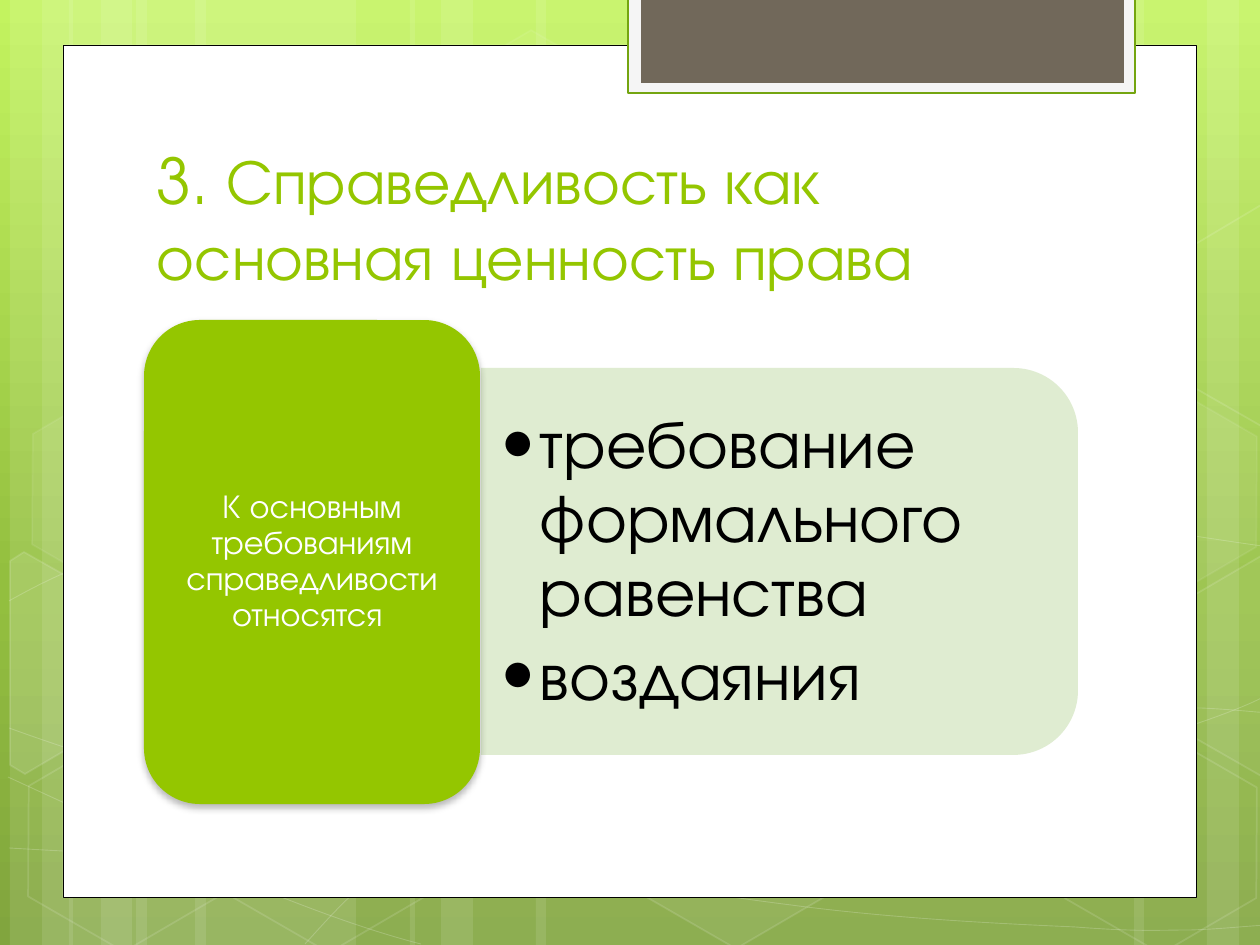
from lxml import etree
from pptx import Presentation
from pptx.dml.color import RGBColor
from pptx.enum.shapes import MSO_SHAPE as SHAPE
from pptx.enum.text import MSO_ANCHOR as ANCHOR, PP_ALIGN as ALIGN
from pptx.oxml.ns import qn
from pptx.util import Pt

PX = 914400 / 126
W, H = 1260, 945
FONT = "TeX Gyre Adventor"
COLORS = {
    "white": "FFFFFF", "black": "000000", "green": "94C600", "pale": "DCEACC",
    "tab": "F5F5F5", "tab_line": "74A510", "brown": "71685A",
}
SKY = [(0, "C3F35F"), (62, "93BF3F"), (100, "81A53E")]

TITLE = "3. Справедливость как основная ценность права"
HEADING = "К основным требованиям справедливости относятся "
ITEMS = ["требование формального равенства", "воздаяния"]

# Left edge and width of each translucent stripe
STRIPES = [(136, 220), (10, 63), (42, 105), (195, 220), (69, 63), (101, 105),
           (924, 220), (1207, 63), (1134, 105), (536, 388), (410, 63), (441, 105)]
# Start point, then cubic segments (two control points and an end point)
CURVES = [
    [(9, 848), (77, 852, 145, 856, 239, 854), (334, 853, 451, 851, 577, 838),
     (703, 825, 882, 801, 998, 777), (1113, 753, 1231, 716, 1269, 694)],
    [(9, 601), (45, 581, 82, 562, 152, 543), (224, 524, 326, 499, 437, 488),
     (549, 479, 685, 478, 824, 488), (963, 498, 1193, 537, 1269, 547)],
    [(8, 777), (160, 847, 311, 916, 421, 944)],
    [(9, 728), (48, 742, 88, 756, 161, 776), (234, 795, 344, 827, 450, 848),
     (554, 869, 687, 892, 791, 905), (896, 919, 1008, 924, 1075, 927),
     (1140, 932, 1158, 930, 1191, 930), (1223, 929, 1246, 926, 1269, 925)],
    [(305, 944), (328, 919, 350, 893, 381, 871), (411, 848, 454, 823, 489, 805),
     (524, 788, 546, 780, 592, 767), (638, 754, 722, 737, 766, 728),
     (811, 719, 818, 719, 857, 717), (896, 713, 958, 709, 1000, 708),
     (1045, 707, 1116, 708, 1116, 708), (1116, 708, 1201, 708, 1201, 708),
     (1223, 709, 1245, 711, 1256, 712), (1268, 713, 1264, 712, 1268, 713)],
]
# Left, top, fill opacity, line opacity (percent)
HEXAGONS = [(421, 45, 4, 8), (626, 742, 6, 12), (14, 745, 0, 12), (18, 393, 7, 8),
            (219, 746, 0, 12), (949, 571, 10, 12), (1051, 747, 0, 12), (1051, 396, 7, 8)]
# Fill opacity and corners of the hexagons cut by the slide edge
CUT_HEXAGONS = [
    (10, [(10, 561), (24, 552), (121, 607), (120, 718), (25, 774), (10, 765)]),
    (4, [(1167, 611), (1261, 556), (1271, 562), (1271, 772), (1263, 777), (1167, 722)]),
    (0, [(1167, 261), (1261, 205), (1273, 212), (1271, 422), (1263, 427), (1167, 372)]),
]


def emu(*lengths):
    return [round(n * PX) for n in lengths]


def rgb(name):
    return RGBColor.from_string(COLORS[name])


def add_alpha(parent, percent):
    color = parent.find(qn("a:solidFill"))[0]
    etree.SubElement(color, qn("a:alpha"), val=str(percent * 1000))


def paint(sp, fill=None, alpha=100, line=None, width=1, line_alpha=100):
    sp.shadow.inherit = False
    spPr = sp.element.spPr
    if fill and alpha:
        sp.fill.solid()
        sp.fill.fore_color.rgb = rgb(fill)
        if alpha < 100:
            add_alpha(spPr, alpha)
    else:
        sp.fill.background()
    if line:
        sp.line.color.rgb = rgb(line)
        sp.line.width = Pt(width)
        if line_alpha < 100:
            add_alpha(spPr.find(qn("a:ln")), line_alpha)
    else:
        sp.line.fill.background()
    return sp


def add_box(s, kind, x, y, w, h, rotation=0, **style):
    sp = s.shapes.add_shape(kind, *emu(x, y, w, h))
    sp.rotation = rotation
    return paint(sp, **style)


def add_outline(s, points, close, **style):
    points = [emu(*p) for p in points]
    builder = s.shapes.build_freeform(*points[0], scale=1.0)
    builder.add_line_segments(points[1:], close=close)
    return paint(builder.convert_to_shape(), **style)


def add_curve(s, curve, **style):
    """Draw the end points as an outline, then bend each line into a cubic."""
    start, *segments = curve
    sp = add_outline(s, [start] + [seg[4:] for seg in segments], False, **style)
    lines = list(sp.element.iter(qn("a:lnTo")))
    for line, seg in zip(lines, segments):
        cubic = etree.Element(qn("a:cubicBezTo"))
        values = emu(*seg)
        for x, y in zip(values[::2], values[1::2]):
            etree.SubElement(cubic, qn("a:pt"), x=str(x - sp.left), y=str(y - sp.top))
        line.getparent().replace(line, cubic)


def add_text(s, lines, x, y, w, h, size, color, anchor=ANCHOR.MIDDLE,
             align=ALIGN.LEFT, inset=(13, 6), spacing=None, after=0, hang=0):
    tf = s.shapes.add_textbox(*emu(x, y, w, h)).text_frame
    tf.word_wrap = True
    tf.vertical_anchor = anchor
    tf.margin_left, tf.margin_top = tf.margin_right, tf.margin_bottom = emu(*inset)
    for i, text in enumerate(lines):
        p = tf.paragraphs[0] if i == 0 else tf.add_paragraph()
        p.alignment = align
        p.line_spacing = spacing
        p.space_after = Pt(after)
        r = p.add_run()
        r.text = text
        r.font.name, r.font.size, r.font.color.rgb = FONT, Pt(size), rgb(color)
        if hang:
            p.level = 1
            pPr = p._p.get_or_add_pPr()
            indent = emu(hang)[0]
            pPr.set("marL", str(indent))
            pPr.set("indent", str(-indent))
            etree.SubElement(pPr, qn("a:buFont"), typeface=FONT)
            etree.SubElement(pPr, qn("a:buChar"), char="•")


def add_soft_shadow(sp):
    effects = sp.element.spPr.find(qn("a:effectLst"))
    shadow = etree.SubElement(effects, qn("a:outerShdw"), blurRad=str(Pt(4)),
                              dist=str(Pt(2)), dir="5400000", rotWithShape="0")
    color = etree.SubElement(shadow, qn("a:srgbClr"), val=COLORS["black"])
    etree.SubElement(color, qn("a:alpha"), val="28000")


def set_background(s):
    fill = s.background.fill
    fill.gradient()
    fill.gradient_angle = 270
    stops = next(s.element.iter(qn("a:gsLst")))
    for stop in list(stops):
        stops.remove(stop)
    for pos, color in SKY:
        stop = etree.SubElement(stops, qn("a:gs"), pos=str(pos * 1000))
        etree.SubElement(stop, qn("a:srgbClr"), val=color)


def main():
    prs = Presentation()
    prs.slide_width, prs.slide_height = emu(W, H)
    s = prs.slides.add_slide(prs.slide_layouts[6])
    set_background(s)

    for x, w in STRIPES:
        add_box(s, SHAPE.RECTANGLE, x, 0, w, H, fill="white", alpha=10)
    for curve in CURVES:
        add_curve(s, curve, line="white", width=0.5, line_alpha=20)
    for x, y, alpha, line_alpha in HEXAGONS:
        sp = add_box(s, SHAPE.HEXAGON, x, y, 220, 192, rotation=30, fill="white",
                     alpha=alpha, line="white", line_alpha=line_alpha)
        sp.adjustments[0] = 0.285
    for alpha, corners in CUT_HEXAGONS:
        add_outline(s, corners, True, fill="white", alpha=alpha, line="white", line_alpha=12)

    add_box(s, SHAPE.RECTANGLE, 63, 45, 1134, 853, fill="white", line="black", width=0.5)
    add_box(s, SHAPE.RECTANGLE, 628, -3, 507, 96, fill="tab", line="tab_line", width=1.25)
    add_box(s, SHAPE.RECTANGLE, 641, -3, 483, 86, fill="brown")
    add_text(s, [TITLE], 144, 141, 968, 158, 36, "green", anchor=ANCHOR.BOTTOM)

    add_box(s, SHAPE.ROUND_2_SAME_RECTANGLE, 586, 263, 387, 597, rotation=90,
            fill="pale", alpha=90)
    add_text(s, ITEMS, 481, 388, 578, 349, 39, "black", inset=(20, 10),
             spacing=0.9, after=6, hang=39)
    add_soft_shadow(add_box(s, SHAPE.ROUNDED_RECTANGLE, 144, 320, 336, 484, fill="green"))
    add_text(s, [HEADING], 160, 336, 304, 451, 19, "white", align=ALIGN.CENTER,
             inset=(10, 5), spacing=0.9)
    prs.save("out.pptx")


if __name__ == "__main__":
    main()
